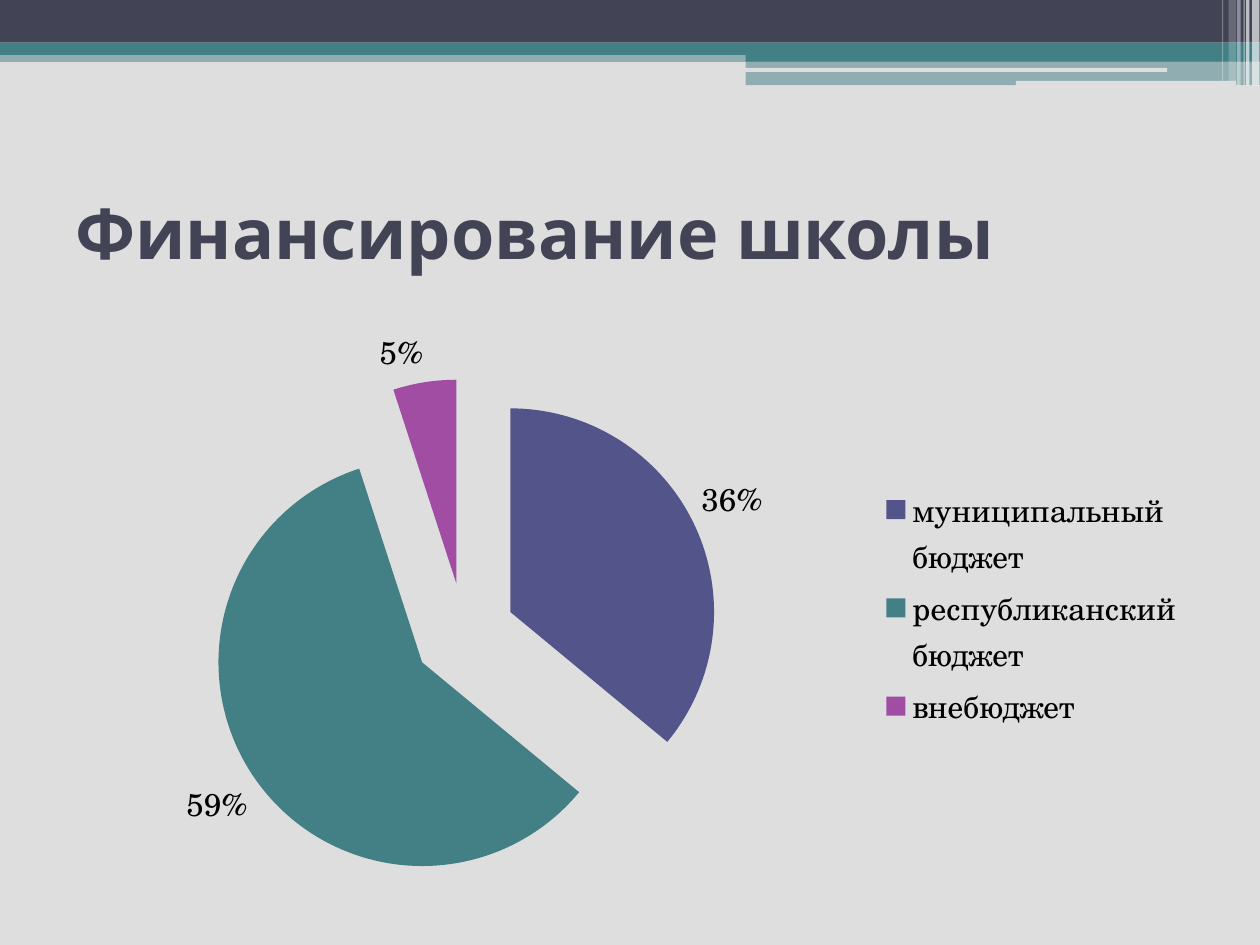
"""Build a slide with an exploded pie chart of school funding sources."""
from typing import NamedTuple

from lxml.etree import SubElement
from pptx import Presentation
from pptx.chart.data import CategoryChartData
from pptx.dml.color import RGBColor
from pptx.enum.chart import XL_CHART_TYPE, XL_LABEL_POSITION, XL_LEGEND_POSITION
from pptx.enum.shapes import MSO_SHAPE
from pptx.enum.text import MSO_ANCHOR, PP_ALIGN
from pptx.oxml import parse_xml
from pptx.oxml.ns import nsdecls, qn
from pptx.util import Cm, Pt

DARK = RGBColor(0x42, 0x44, 0x56)
TEAL = RGBColor(0x43, 0x80, 0x86)
INDIGO = RGBColor(0x53, 0x54, 0x8A)
PURPLE = RGBColor(0xA0, 0x4D, 0xA3)
GREY = RGBColor(0xDE, 0xDE, 0xDE)
WHITE = RGBColor(0xFF, 0xFF, 0xFF)
BLACK = RGBColor(0, 0, 0)
TITLE_FONT = "Karla"
CHART_FONT = "TeX Gyre Schola"
EXPLOSION = 25


class Bar(NamedTuple):
    left: float
    top: float
    width: float
    height: float
    color: RGBColor
    opacity: int = 100
    rounded: bool = False


class Source(NamedTuple):
    name: str
    share: int
    color: RGBColor


BANDS = [
    Bar(0, 1.02, 25.4, 0.23, TEAL, 50),
    Bar(0, 0, 25.4, 0.86, DARK),
    Bar(0, 0.86, 25.4, 0.25, TEAL),
    Bar(15.03, 0.99, 10.37, 0.25, TEAL),
    Bar(15.03, 1.23, 10.37, 0.49, TEAL, 50),
    Bar(15.02, 1.37, 8.51, 0.08, GREY, rounded=True),
    Bar(20.48, 1.63, 4.44, 0.1, GREY, rounded=True),
]
STRIPES = [
    Bar(left, 0, width, height, WHITE, opacity)
    for left, width, height, opacity in [
        (25.24, 0.15, 1.73, 65),
        (25.12, 0.07, 1.73, 65),
        (25.07, 0.02, 1.73, 60),
        (24.94, 0.07, 1.73, 40),
        (24.77, 0.15, 1.63, 20),
        (24.64, 0.02, 1.63, 30),
    ]
]
SOURCES = [
    Source("муниципальный бюджет", 36, INDIGO),
    Source("республиканский бюджет", 59, TEAL),
    Source("внебюджет", 5, PURPLE),
]


def add_bar(slide, bar: Bar) -> None:
    """Draw one decorative bar, translucent if asked."""
    kind = MSO_SHAPE.ROUNDED_RECTANGLE if bar.rounded else MSO_SHAPE.RECTANGLE
    sp = slide.shapes.add_shape(
        kind, Cm(bar.left), Cm(bar.top), Cm(bar.width), Cm(bar.height)
    )
    sp.shadow.inherit = False
    sp.line.fill.background()
    sp.fill.solid()
    sp.fill.fore_color.rgb = bar.color
    if bar.opacity < 100:
        color = sp.fill._xPr.find(qn("a:solidFill"))[0]
        SubElement(color, qn("a:alpha")).set("val", str(bar.opacity * 1000))


def set_title(slide, text: str) -> None:
    """Place and format the title placeholder."""
    title = slide.shapes.title
    title.left, title.top = Cm(1.27), Cm(3.18)
    title.width, title.height = Cm(22.86), Cm(2.97)
    tf = title.text_frame
    tf.text = text
    tf.vertical_anchor = MSO_ANCHOR.MIDDLE
    p = tf.paragraphs[0]
    p.alignment = PP_ALIGN.LEFT
    p.font.name = TITLE_FONT
    p.font.size = Pt(40)
    p.font.bold = True
    p.font.color.rgb = DARK


def add_pie(slide, sources: list[Source]) -> None:
    """Add the exploded pie with percentages and a legend."""
    data = CategoryChartData()
    data.categories = [source.name for source in sources]
    data.add_series("Series 1", [source.share for source in sources])
    chart = slide.shapes.add_chart(
        XL_CHART_TYPE.PIE, Cm(1.27), Cm(6.25), Cm(22.86), Cm(12.01), data
    ).chart
    chart.has_title = False
    chart.font.name = CHART_FONT
    chart.font.size = Pt(18)
    chart.font.color.rgb = BLACK
    chart.has_legend = True
    chart.legend.position = XL_LEGEND_POSITION.RIGHT
    chart.legend.include_in_layout = False

    plot = chart.plots[0]
    plot.vary_by_categories = True
    series = plot.series[0]
    for i, source in enumerate(sources):
        fill = series.points[i].format.fill
        fill.solid()
        fill.fore_color.rgb = source.color
    explosion = parse_xml(f'<c:explosion {nsdecls("c")} val="{EXPLOSION}"/>')
    series._element.find(qn("c:dPt")).addprevious(explosion)

    labels = series.data_labels
    labels.show_percentage = True
    labels.show_value = False
    labels.number_format = "0%"
    labels.number_format_is_linked = False
    labels.position = XL_LABEL_POSITION.OUTSIDE_END


def main() -> None:
    """Build and save the slide."""
    prs = Presentation()
    prs.slide_width, prs.slide_height = Cm(25.4), Cm(19.05)
    slide = prs.slides.add_slide(prs.slide_layouts[5])
    slide.background.fill.solid()
    slide.background.fill.fore_color.rgb = GREY
    for bar in BANDS + STRIPES:
        add_bar(slide, bar)
    set_title(slide, "Финансирование школы")
    add_pie(slide, SOURCES)
    prs.save("out.pptx")


if __name__ == "__main__":
    main()
